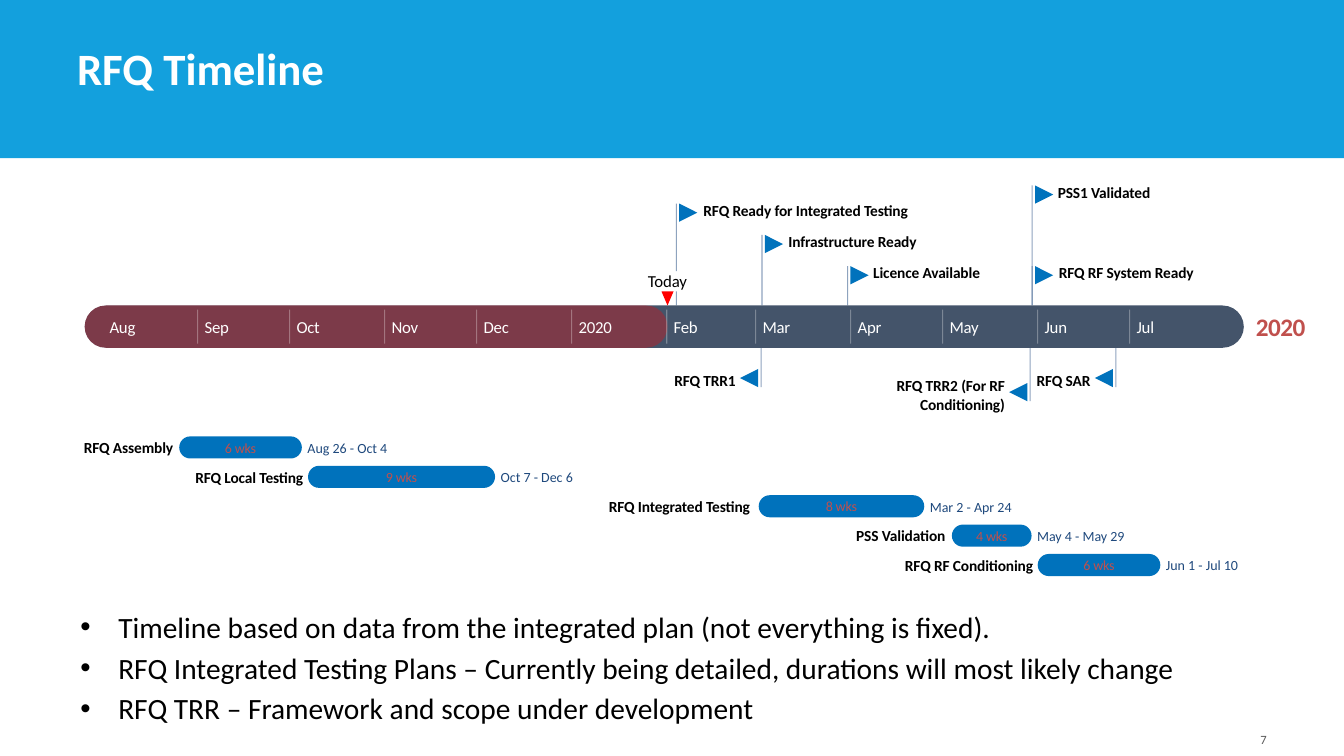
from itertools import accumulate

from lxml.etree import SubElement
from pptx import Presentation
from pptx.dml.color import RGBColor
from pptx.enum.shapes import MSO_CONNECTOR, MSO_SHAPE
from pptx.enum.text import MSO_ANCHOR, PP_ALIGN
from pptx.oxml.ns import qn
from pptx.util import Pt

COLORS = {
    "header": "13A0DD", "white": "FFFFFF", "black": "000000", "grey": "595959",
    "band": "44546A", "red": "FF0000", "task": "0072BC", "stem": "1F497E",
    "date": "1F497D", "accent": "C0504D",
}
LEFT, CENTER, RIGHT = PP_ALIGN.LEFT, PP_ALIGN.CENTER, PP_ALIGN.RIGHT

# Time scale: days are counted from 1 August
MONTHS = ["Aug", "Sep", "Oct", "Nov", "Dec", "2020",
          "Feb", "Mar", "Apr", "May", "Jun", "Jul"]
MONTH_STARTS = list(accumulate([31, 30, 31, 30, 31, 31, 29, 31, 30, 31, 30], initial=0))
SCALE_LEFT, DAY_WIDTH = 73.3, 2.19
BAND_LEFT, BAND_TOP, BAND_WIDTH, BAND_HEIGHT = 60.5, 218.2, 828, 30.2
BAND_BOTTOM = BAND_TOP + BAND_HEIGHT
TODAY_X, TODAY_TOP, TODAY_HEIGHT = 476.8, 193.7, 14.4
FLAG = 13

# Stem x, stem end, label, label width
MILESTONES_ABOVE = [
    (483.1, 145.4, "RFQ Ready for Integrated Testing", 149.8),
    (544.3, 167.8, "Infrastructure Ready", 94.3),
    (605.5, 190.1, "Licence Available", 77.8),
    (737.3, 132.5, "PSS1 Validated", 67.7),
    (737.3, 190.1, "RFQ RF System Ready", 99.4),
]
MILESTONES_BELOW = [
    (543.6, 276.5, "RFQ TRR1", 46),
    (735.8, 286.6, "RFQ TRR2 (For RF Conditioning)", 82),
    (797, 276.5, "RFQ SAR", 42),
]
# Label, label right edge, label width, first day, last day, duration, dates
TASKS = [
    ("RFQ Assembly", 123.8, 66, 25, 64, "6 wks", "Aug 26 - Oct 4"),
    ("RFQ Local Testing", 216.7, 80, 67, 127, "9 wks", "Oct 7 - Dec 6"),
    ("RFQ Integrated Testing", 535.7, 104, 214, 267, "8 wks", "Mar 2 - Apr 24"),
    ("PSS Validation", 675.4, 66, 277, 302, "4 wks", "May 4 - May 29"),
    ("RFQ RF Conditioning", 738, 96, 305, 344, "6 wks", "Jun 1 - Jul 10"),
]
NOTES = [
    "Timeline based on data from the integrated plan (not everything is fixed).",
    "RFQ Integrated Testing Plans – Currently being detailed, durations will most likely change",
    "RFQ TRR – Framework and scope under development",
]


def day_x(day):
    return SCALE_LEFT + day * DAY_WIDTH


class TimelineSlide:
    font_name = "Calibri"

    def __init__(self, slide):
        self.slide = slide

    def set_opacity(self, element, percent):
        color = next(element.iter(qn("a:srgbClr")))
        SubElement(color, qn("a:alpha")).set("val", str(percent * 1000))

    def style(self, paragraph, size, color, bold=False, align=LEFT, spacing=0):
        paragraph.alignment = align
        for run in paragraph.runs:
            run.font.name = self.font_name
            run.font.size = Pt(size)
            run.font.bold = bold
            run.font.color.rgb = RGBColor.from_string(COLORS[color])
            if spacing:
                run.font._element.set("spc", str(round(spacing * 100)))

    def frame(self, shape, text, anchor=MSO_ANCHOR.MIDDLE, inset=(0, 0)):
        frame = shape.text_frame
        frame.word_wrap = True
        frame.vertical_anchor = anchor
        frame.margin_left = frame.margin_right = Pt(inset[0])
        frame.margin_top = frame.margin_bottom = Pt(inset[1])
        frame.text = text
        return frame

    def text(self, left, top, width, height, text, size, color,
             anchor=MSO_ANCHOR.MIDDLE, inset=(0, 0), **style):
        box = self.slide.shapes.add_textbox(Pt(left), Pt(top), Pt(width), Pt(height))
        frame = self.frame(box, text, anchor, inset)
        for paragraph in frame.paragraphs:
            self.style(paragraph, size, color, **style)
        return frame

    def shape(self, kind, left, top, width, height, color, rotation=0, opacity=100):
        shape = self.slide.shapes.add_shape(kind, Pt(left), Pt(top), Pt(width), Pt(height))
        shape.shadow.inherit = False
        shape.fill.solid()
        shape.fill.fore_color.rgb = RGBColor.from_string(COLORS[color])
        shape.line.fill.background()
        shape.rotation = rotation
        if opacity < 100:
            self.set_opacity(shape._element.spPr, opacity)
        return shape

    def pill(self, left, top, width, height, color, opacity=100):
        pill = self.shape(MSO_SHAPE.ROUNDED_RECTANGLE, left, top, width, height,
                          color, opacity=opacity)
        pill.adjustments[0] = 0.5
        return pill

    def vertical_line(self, x, top, bottom, color, opacity):
        line = self.slide.shapes.add_connector(
            MSO_CONNECTOR.STRAIGHT, Pt(x), Pt(top), Pt(x), Pt(bottom))
        line.line.width = Pt(0.75)
        line.line.color.rgb = RGBColor.from_string(COLORS[color])
        self.set_opacity(line._element.spPr, opacity)
        SubElement(line._element.spPr, qn("a:effectLst"))

    def flag(self, left, top, rotation):
        self.shape(MSO_SHAPE.FLOWCHART_MERGE, left, top, FLAG, FLAG, "task", rotation)

    def milestone_above(self, x, top, label, width):
        if abs(x - TODAY_X) < 14:  # leave room for the Today label
            self.vertical_line(x, top, TODAY_TOP, "stem", 50)
            top_of_rest = TODAY_TOP + TODAY_HEIGHT
        else:
            top_of_rest = top
        self.vertical_line(x, top_of_rest, BAND_TOP, "stem", 50)
        self.flag(x + 2, top, 270)
        self.text(x + 17.5, top - 2, width, 13.4, label, 11, "black",
                  bold=True, align=CENTER, spacing=-0.1)

    def milestone_below(self, x, bottom, label, width):
        self.vertical_line(x, BAND_BOTTOM, bottom, "stem", 50)
        self.flag(x - 2 - FLAG, bottom - FLAG, 90)
        height = 26.8 if width > 60 else 13.4
        self.text(x - 18 - width, bottom - 4.7 - height / 2, width, height, label,
                  11, "black", bold=True, align=RIGHT, spacing=-0.1)

    def task(self, top, label, label_right, label_width, first, last, duration, dates):
        start, end = day_x(first), day_x(last + 1)
        bar = self.pill(start, top, end - start, 15.8, "task")
        frame = self.frame(bar, duration)
        self.style(frame.paragraphs[0], 10, "accent", align=CENTER, spacing=-0.1)
        self.text(label_right - label_width, top + 1.3, label_width, 13.4, label,
                  11, "black", bold=True, align=RIGHT, spacing=-0.1)
        self.text(end + 4, top + 2, 66, 12.2, dates, 10, "date")

    def bullets(self, left, top, width, height, lines, size):
        frame = self.text(left, top, width, height, "\n".join(lines), size, "black",
                          anchor=MSO_ANCHOR.TOP, inset=(7.2, 3.6))
        for index, paragraph in enumerate(frame.paragraphs):
            properties = paragraph._p.get_or_add_pPr()
            properties.set("marL", str(Pt(27)))
            properties.set("indent", str(Pt(-27)))
            SubElement(properties, qn("a:buFont")).set("typeface", "Arial")
            SubElement(properties, qn("a:buChar")).set("char", "•")
            if index:
                paragraph.space_before = Pt(4)


def main():
    presentation = Presentation()
    presentation.slide_width, presentation.slide_height = Pt(960), Pt(540)
    page = TimelineSlide(presentation.slides.add_slide(presentation.slide_layouts[6]))

    # Header, notes and page number
    page.shape(MSO_SHAPE.RECTANGLE, 0, 0, 960, 113, "header")
    page.text(48, 27.4, 750, 44, "RFQ Timeline", 32, "white",
              anchor=MSO_ANCHOR.BOTTOM, inset=(7.2, 3.6), bold=True)
    page.text(688, 508.3, 224, 28.8, "7", 9, "grey",
              anchor=MSO_ANCHOR.BOTTOM, inset=(7.2, 3.6), align=RIGHT)
    page.bullets(50.4, 431.3, 862, 88.6, NOTES, 21)

    # Milestones
    for milestone in MILESTONES_ABOVE:
        page.milestone_above(*milestone)
    for milestone in MILESTONES_BELOW:
        page.milestone_below(*milestone)

    # Time band with the elapsed part
    page.pill(BAND_LEFT, BAND_TOP, BAND_WIDTH, BAND_HEIGHT, "band")
    page.pill(BAND_LEFT, BAND_TOP, TODAY_X - BAND_LEFT, BAND_HEIGHT, "red", opacity=30)
    page.text(892.8, 222.3, 44, 22, "2020", 18, "accent",
              bold=True, align=CENTER, spacing=-0.4)
    for month, start in zip(MONTHS, MONTH_STARTS):
        x = day_x(start)
        page.text(x + 5, 226, 30, 14.6, month, 12, "white", spacing=-0.2)
        if start:
            page.vertical_line(x, BAND_TOP + 3, BAND_BOTTOM - 3, "white", 30)

    # Today marker
    page.text(TODAY_X - 20, TODAY_TOP, 40, TODAY_HEIGHT, "Today", 12, "black",
              align=CENTER, spacing=-0.1)
    page.shape(MSO_SHAPE.ISOSCELES_TRIANGLE, TODAY_X - 4.3, BAND_TOP - 10, 8.6, 10,
               "red", rotation=180)

    # Tasks
    for row, task in enumerate(TASKS):
        page.task(311.7 + 21 * row, *task)

    presentation.save("out.pptx")


if __name__ == "__main__":
    main()
